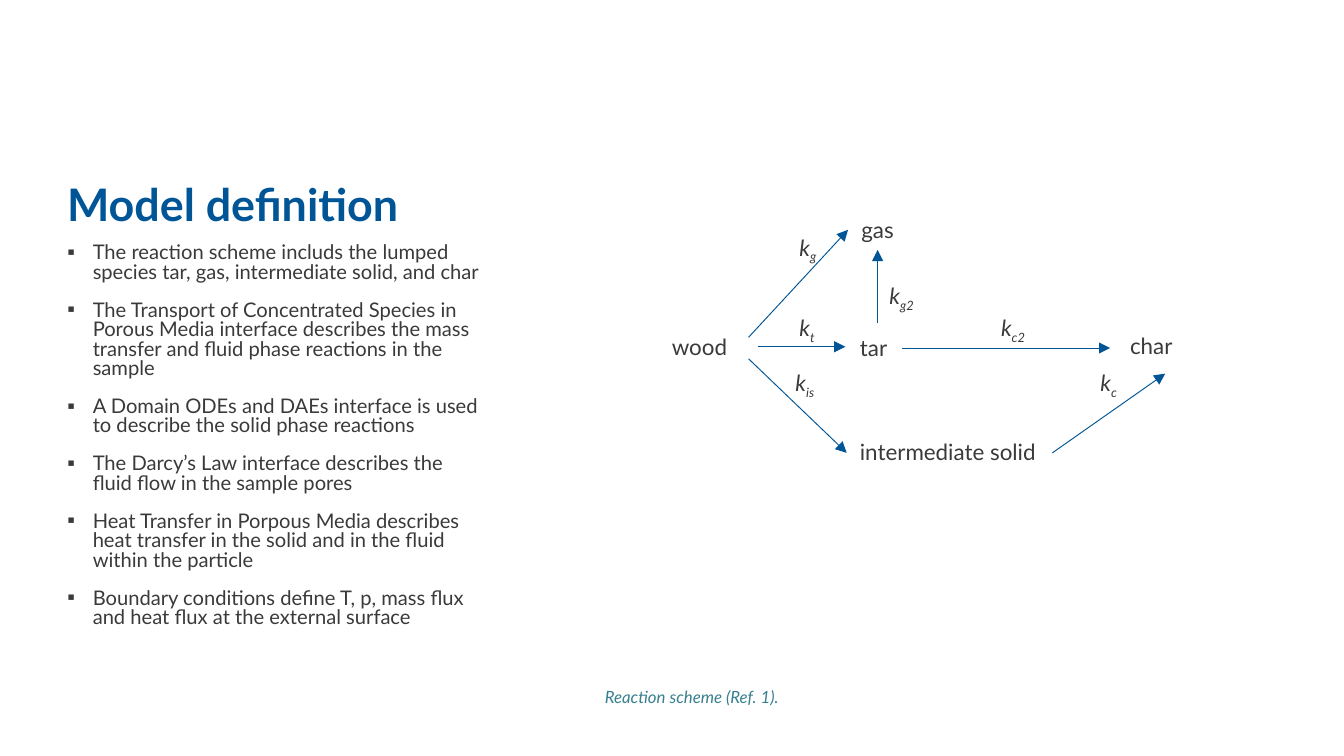
from dataclasses import dataclass

from lxml.etree import SubElement
from pptx import Presentation
from pptx.dml.color import RGBColor
from pptx.enum.shapes import MSO_CONNECTOR
from pptx.enum.text import MSO_ANCHOR, MSO_AUTO_SIZE
from pptx.oxml.ns import qn
from pptx.util import Inches, Pt


@dataclass(frozen=True)
class Theme:
    font: str = "Lato"
    blue: RGBColor = RGBColor(0x00, 0x55, 0x96)
    ink: RGBColor = RGBColor(0x39, 0x3A, 0x39)
    teal: RGBColor = RGBColor(0x38, 0x80, 0x90)
    title_size: float = 24
    body_size: float = 10.8
    caption_size: float = 9
    label_size: float = 12
    arrow_width: float = 0.5


THEME = Theme()

POINTS = [
    "The reaction scheme includs the lumped species tar, gas, intermediate solid, and char",
    "The Transport of Concentrated Species in Porous Media interface describes the mass "
    "transfer and fluid phase reactions in the sample",
    "A Domain ODEs and DAEs interface is used to describe the solid phase reactions",
    "The Darcy’s Law interface describes the fluid flow in the sample pores",
    "Heat Transfer in Porpous Media describes heat transfer in the solid and in the fluid "
    "within the particle",
    "Boundary conditions define T, p, mass flux and heat flux at the external surface",
]

SPECIES = [
    ("wood", 4.9, 2.43, 0.62),
    ("gas", 6.31, 1.56, 0.45),
    ("tar", 6.3, 2.44, 0.41),
    ("intermediate solid", 6.3, 3.21, 1.53),
    ("char", 8.31, 2.42, 0.52),
]

RATE_CONSTANTS = [
    ("g", 5.85, 1.69, 0.34),
    ("t", 5.85, 2.29, 0.32),
    ("g2", 6.52, 2.05, 0.4),
    ("c2", 7.35, 2.29, 0.4),
    ("is", 5.82, 2.7, 0.35),
    ("c", 8.09, 2.7, 0.33),
]

REACTIONS = [
    ((5.57, 2.67), (6.3, 3.37)),
    ((5.64, 2.58), (6.29, 2.58)),
    ((7.83, 3.37), (8.67, 2.78)),
    ((6.71, 2.59), (8.26, 2.59)),
    ((6.53, 2.4), (6.53, 1.86)),
    ((5.57, 2.51), (6.31, 1.71)),
]


def apply_format(target, values):
    for name, value in values.items():
        setattr(target, name, value)


def add_run(paragraph, text, size, color, bold=False, italic=False):
    run = paragraph.add_run()
    run.text = text
    apply_format(run.font, {"name": THEME.font, "size": Pt(size),
                            "bold": bold, "italic": italic})
    run.font.color.rgb = color
    return run


def add_frame(slide, left, top, width, height, **layout):
    frame = slide.shapes.add_textbox(*map(Inches, (left, top, width, height))).text_frame
    apply_format(frame, {"word_wrap": True, **layout})
    return frame


def add_title(slide, text):
    frame = add_frame(slide, 0.5, 0.89, 3.23, 0.88, margin_left=0,
                      vertical_anchor=MSO_ANCHOR.BOTTOM)
    heading = frame.paragraphs[0]
    heading.line_spacing = 0.9
    add_run(heading, text, THEME.title_size, THEME.blue, bold=True)


def add_bullets(slide, points):
    frame = add_frame(slide, 0.5, 1.77, 3.22, 3.46, margin_left=0)
    indent = Inches(0.19)
    for index, text in enumerate(points):
        point = frame.add_paragraph() if index else frame.paragraphs[0]
        properties = point._p.get_or_add_pPr()
        properties.set("marL", str(indent))
        properties.set("indent", str(-indent))
        SubElement(properties, qn("a:buFont")).set("typeface", THEME.font)
        SubElement(properties, qn("a:buChar")).set("char", "▪")
        apply_format(point, {"line_spacing": 0.8, "space_before": Pt(10 if index else 0)})
        add_run(point, text, THEME.body_size, THEME.ink)


def add_caption(slide, text):
    frame = add_frame(slide, 4.5, 5.06, 3.39, 0.33, margin_left=0)
    add_run(frame.paragraphs[0], text, THEME.caption_size, THEME.teal, italic=True)


def add_label(slide, text, left, top, width, subscript=""):
    frame = add_frame(slide, left, top, width, 0.3, word_wrap=False,
                      auto_size=MSO_AUTO_SIZE.SHAPE_TO_FIT_TEXT)
    style = (THEME.label_size, THEME.ink, False, bool(subscript))
    add_run(frame.paragraphs[0], text, *style)
    if subscript:
        index = add_run(frame.paragraphs[0], subscript, *style)
        index._r.get_or_add_rPr().set("baseline", "-25000")


def add_arrow(slide, start, end):
    arrow = slide.shapes.add_connector(MSO_CONNECTOR.STRAIGHT, *map(Inches, start + end))
    arrow.line.color.rgb = THEME.blue
    arrow.line.width = Pt(THEME.arrow_width)
    SubElement(arrow.line._get_or_add_ln(), qn("a:tailEnd")).set("type", "triangle")
    SubElement(arrow._element.spPr, qn("a:effectLst"))


def main():
    deck = Presentation()
    width = Inches(10)
    apply_format(deck, {"slide_width": width, "slide_height": width * 9 // 16})
    slide = deck.slides.add_slide(deck.slide_layouts[6])
    add_title(slide, "Model definition")
    add_bullets(slide, POINTS)
    add_caption(slide, "Reaction scheme (Ref. 1).")
    for name, *place in SPECIES:
        add_label(slide, name, *place)
    for subscript, *place in RATE_CONSTANTS:
        add_label(slide, "k", *place, subscript=subscript)
    for start, end in REACTIONS:
        add_arrow(slide, start, end)
    deck.save("out.pptx")


if __name__ == "__main__":
    main()
